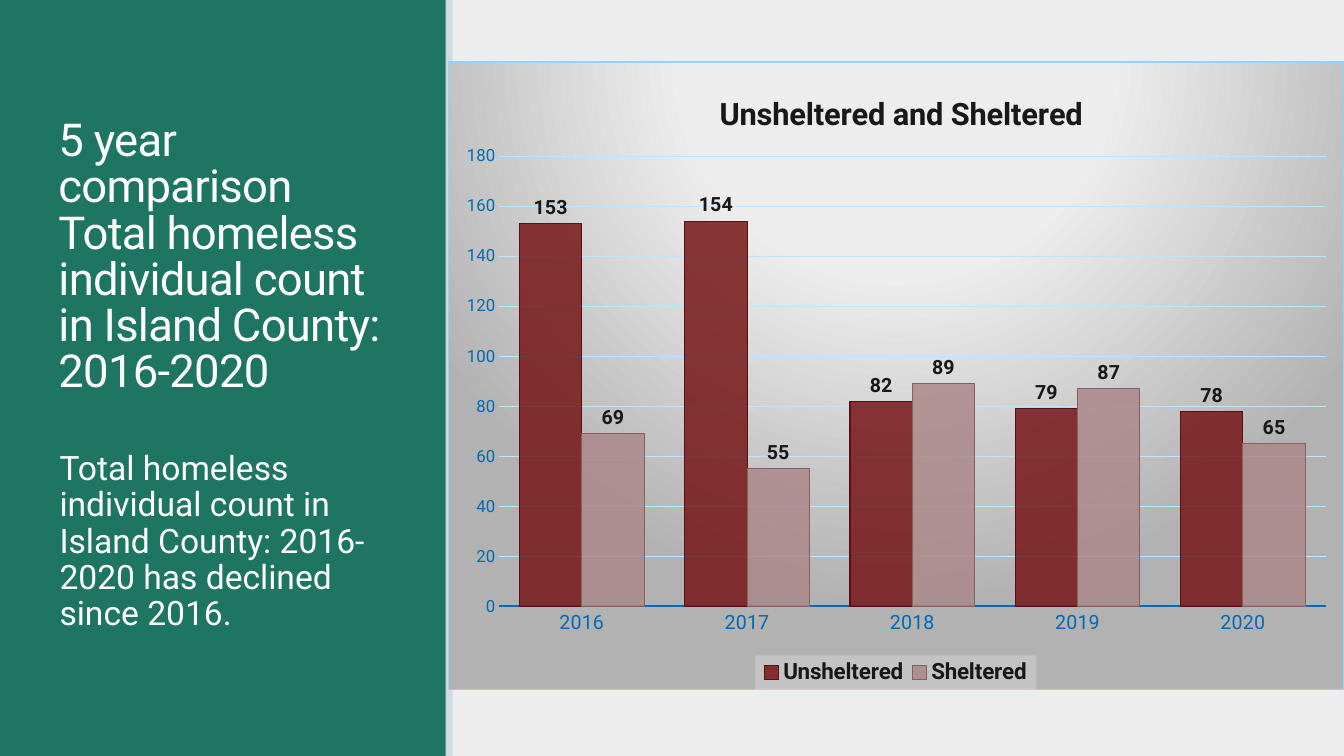
from dataclasses import dataclass

from lxml import etree
from pptx import Presentation, util as u
from pptx.chart.data import CategoryChartData
from pptx.dml.color import RGBColor
from pptx.enum import chart as ch, shapes, text
from pptx.oxml import parse_xml
from pptx.oxml.ns import qn

NS = ('xmlns:c="http://schemas.openxmlformats.org/drawingml/2006/chart" '
      'xmlns:a="http://schemas.openxmlformats.org/drawingml/2006/main"')


@dataclass(frozen=True)
class Theme:
    font: str = "Roboto"
    page: str = "EDEDED"
    panel: str = "1E7561"
    strip: str = "CEDBE2"
    light: str = "FFFFFF"
    dark: str = "181818"
    base: str = "002842"
    axis: str = "006BB1"
    grid: str = "BCE5FF"
    border: str = "90D3FF"
    shade: str = "B2B2B2"
    title: float = 32.4
    body: float = 24
    chart_title: float = 22
    legend: float = 16
    label: float = 14
    tick: float = 12
    small: float = 10


def rgb(color):
    return RGBColor.from_string(color)


def set_font(f, size, color, bold=False):
    f.name, f.size, f.bold = Theme.font, u.Pt(size), bold
    f.color.rgb = rgb(color)


def write(tf, content, size, color, bold=False, spacing=None, line=None, before=0, after=0):
    p = tf.paragraphs[0]
    p.line_spacing = line
    p.space_before, p.space_after = u.Pt(before), u.Pt(after)
    for i, part in enumerate(content.splitlines()):
        if i:
            p.add_line_break()
        r = p.add_run()
        r.text = part
        set_font(r.font, size, color, bold)
        if spacing is not None:
            r.font._element.set("spc", str(round(spacing * 100)))
    return p


def set_line(line, color, width):
    line.color.rgb = rgb(color)
    line.width = u.Pt(width)


def place(el, index, inner=False, **parts):
    for old in el.findall(qn("c:layout")):
        el.remove(old)
    target = '<c:layoutTarget val="inner"/>' if inner else ""
    modes = "".join(f'<c:{k}Mode val="edge"/>' for k in "xy")
    values = "".join(f'<c:{k} val="{v}"/>' for k, v in parts.items())
    el.insert(index, parse_xml(f"<c:layout {NS}><c:manualLayout>{target}{modes}{values}"
                               "</c:manualLayout></c:layout>"))


class Deck:
    """Holds the theme and the current slide."""

    def __init__(self, theme):
        self.t = theme
        self.prs = Presentation()
        self.prs.slide_width, self.prs.slide_height = u.Inches(13.33), u.Inches(7.5)
        self.s = self.prs.slides.add_slide(self.prs.slide_layouts[7])
        self.s.background.fill.solid()
        self.s.background.fill.fore_color.rgb = rgb(theme.page)
        unused = self.s.placeholders[1].element
        unused.getparent().remove(unused)

    def panel(self, box, color, depth):
        sp = self.s.shapes.add_shape(shapes.MSO_SHAPE.RECTANGLE, *map(u.Inches, box))
        sp.shadow.inherit = False
        sp.fill.solid()
        sp.fill.fore_color.rgb = rgb(color)
        sp.line.fill.background()
        self.s.shapes._spTree.insert(2 + depth, sp.element)

    def placeholder(self, idx, box, anchor, content, **fmt):
        sp = self.s.placeholders[idx]
        sp.left, sp.top, sp.width, sp.height = map(u.Inches, box)
        tf = sp.text_frame
        tf.word_wrap, tf.auto_size = True, text.MSO_AUTO_SIZE.NONE
        tf.vertical_anchor = anchor
        p = write(tf, content, color=self.t.light, **fmt)
        p.alignment = text.PP_ALIGN.LEFT

    def columns(self, box, title, cats, series):
        t = self.t
        data = CategoryChartData()
        data.categories = cats
        for name, values, *_ in series:
            data.add_series(name, values)
        chart = self.s.shapes.add_chart(ch.XL_CHART_TYPE.COLUMN_CLUSTERED,
                                        *map(u.Inches, box), data).chart
        set_font(chart.font, t.small, t.base)
        self.chart_area(chart)
        chart.has_title = True
        write(chart.chart_title.text_frame, title, t.chart_title, t.dark, bold=True)
        place(chart.chart_title._element, 1, x=0.297, y=0.042)
        self.axes(chart)
        self.legend(chart)
        plot = chart.plots[0]
        plot.gap_width, plot.overlap, plot.vary_by_categories = 65, 0, False
        place(plot._element.getparent(), 0, inner=True, x=0.057, y=0.15, w=0.923, h=0.717)
        for ser, (_, _, fill, edge) in zip(plot.series, series):
            self.style_series(ser, fill, edge)

    def chart_area(self, chart):
        t = self.t
        stops = "".join(f'<a:gs pos="{pos * 1000}"><a:srgbClr val="{c}"/></a:gs>'
                        for pos, c in ((0, t.page), (39, t.page), (100, t.shade)))
        area = parse_xml(
            f'<c:spPr {NS}><a:gradFill><a:gsLst>{stops}</a:gsLst><a:path path="circle">'
            '<a:fillToRect l="50000" t="-80000" r="50000" b="180000"/></a:path></a:gradFill>'
            f'<a:ln w="9525"><a:solidFill><a:srgbClr val="{t.border}"/></a:solidFill></a:ln></c:spPr>')
        chart._chartSpace.find(qn("c:chart")).addnext(area)

    def axes(self, chart):
        t = self.t
        cat, val = chart.category_axis, chart.value_axis
        for axis, size in ((cat, t.label), (val, t.tick)):
            axis.major_tick_mark = axis.minor_tick_mark = ch.XL_TICK_MARK.NONE
            set_font(axis.tick_labels.font, size, t.axis)
        set_line(cat.format.line, t.axis, 1.5)
        val.format.line.fill.background()
        val.minimum_scale, val.maximum_scale, val.major_unit = 0, 180, 20
        val.has_major_gridlines = True
        set_line(val.major_gridlines.format.line, t.grid, 0.75)

    def legend(self, chart):
        t = self.t
        chart.has_legend = True
        lg = chart.legend
        lg.position, lg.include_in_layout = ch.XL_LEGEND_POSITION.BOTTOM, False
        set_font(lg.font, t.legend, t.dark, bold=True)
        place(lg._element, 1, x=0.343, y=0.945, w=0.314, h=0.055)
        lg._element.find(qn("c:overlay")).addnext(parse_xml(
            f'<c:spPr {NS}><a:solidFill><a:srgbClr val="{t.page}"><a:alpha val="30000"/>'
            "</a:srgbClr></a:solidFill></c:spPr>"))

    def style_series(self, ser, fill, edge):
        ser.invert_if_negative = False
        ser.format.fill.solid()
        ser.format.fill.fore_color.rgb = rgb(fill)
        clr = ser._element.find(qn("c:spPr")).find(f"{qn('a:solidFill')}/{qn('a:srgbClr')}")
        etree.SubElement(clr, qn("a:alpha")).set("val", "85000")
        set_line(ser.format.line, edge, 0.75)
        labels = ser.data_labels
        labels.show_value = True
        labels.position = ch.XL_LABEL_POSITION.OUTSIDE_END
        set_font(labels.font, self.t.label, self.t.dark, bold=True)


def main():
    t = Theme()
    deck = Deck(t)
    deck.panel((0, 0, 4.43, 7.5), t.panel, 0)
    deck.panel((4.42, 0, 0.07, 7.5), t.strip, 1)
    deck.placeholder(0, (0.48, 1.49, 3.5, 2.5), text.MSO_ANCHOR.BOTTOM,
                     """5 year comparison
Total homeless individual count in Island County: 2016-2020""",
                     size=t.title, spacing=-0.5, line=0.85)
    deck.placeholder(2, (0.49, 4.43, 3.5, 2.11), text.MSO_ANCHOR.TOP,
                     "Total homeless individual count in Island County: 2016-2020 "
                     "has declined since 2016.",
                     size=t.body, line=0.9, before=12, after=2)
    deck.columns((4.44, 0.61, 8.89, 6.24), "Unsheltered and Sheltered",
                 ["2016", "2017", "2018", "2019", "2020"],
                 [("Unsheltered", (153, 154, 82, 79, 78), "751717", "581111"),
                  ("Sheltered", (69, 55, 89, 87, 65), "AB8888", "875F5F")])
    deck.prs.save("out.pptx")


if __name__ == "__main__":
    main()
